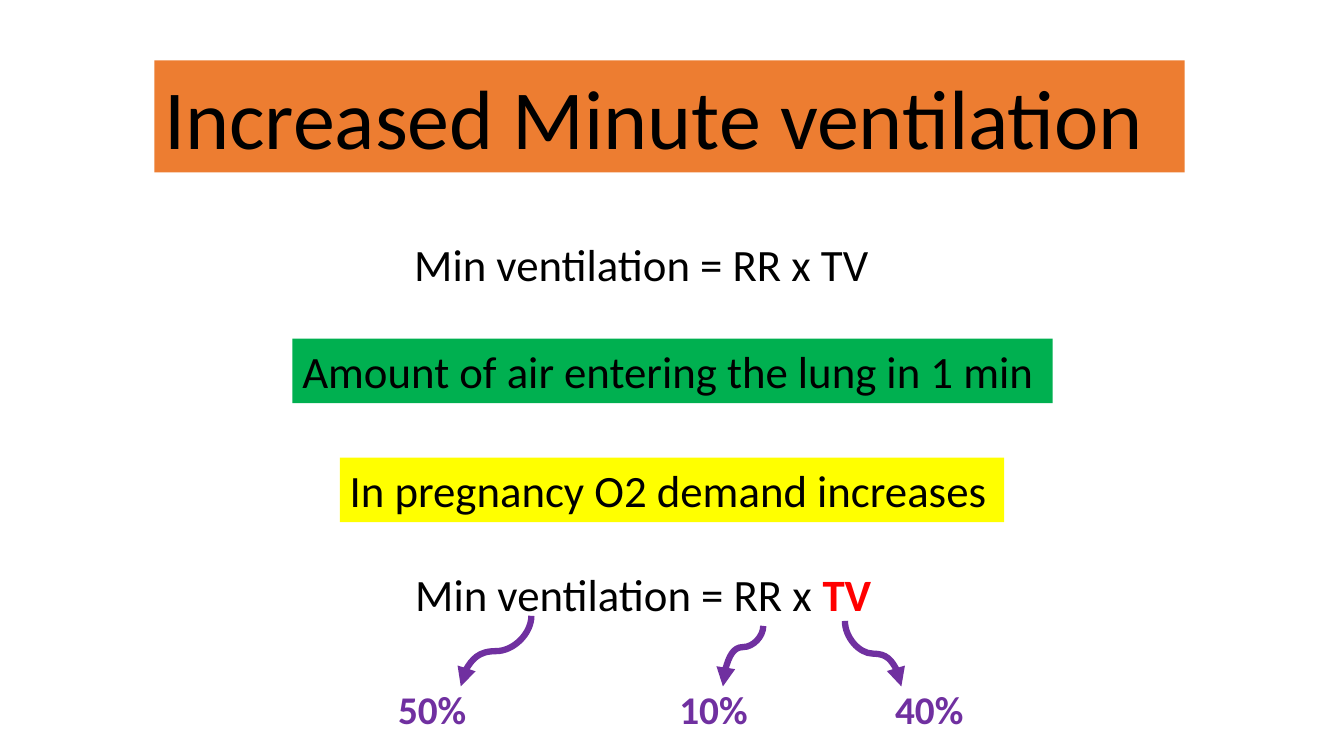
from dataclasses import dataclass

from lxml.etree import SubElement
from pptx import Presentation
from pptx.dml.color import RGBColor
from pptx.enum.shapes import MSO_CONNECTOR, MSO_SHAPE
from pptx.enum.text import MSO_ANCHOR, PP_ALIGN
from pptx.oxml.ns import qn
from pptx.slide import Slide
from pptx.util import Inches, Pt

COLORS = {
    "black": "000000",
    "orange": "ED7D31",
    "green": "00B050",
    "yellow": "FFFF00",
    "red": "FF0000",
    "purple": "7030A0",
}
FONT = "Calibri"


@dataclass(frozen=True)
class Run:
    text: str
    color: str = "black"
    bold: bool = False


@dataclass(frozen=True)
class Label:
    left: float
    top: float
    width: float
    height: float
    runs: tuple[Run, ...]
    size: int = 32
    fill: str | None = None


@dataclass(frozen=True)
class CurvedArrow:
    start: tuple[float, float]
    end: tuple[float, float]
    bend: float = 0.5


def percentage(left: float, text: str) -> Label:
    return Label(left, 6.75, 1.07, 0.57, (Run(text, "purple", True),), 28)


LABELS = (
    Label(1.53, 0.6, 10.22, 1.11, (Run("Increased Minute ventilation"),), 60, "orange"),
    Label(4.01, 2.3, 4.78, 0.64, (Run("Min ventilation = RR x TV"),)),
    Label(2.9, 3.36, 7.54, 0.64,
          (Run("Amount of air entering the lung in 1 min"),), fill="green"),
    Label(3.37, 4.54, 6.59, 0.64,
          (Run("In pregnancy O2 demand increases"),), fill="yellow"),
    Label(4.02, 5.57, 4.76, 0.64,
          (Run("Min ventilation = RR x "), Run("TV", "red", True))),
    percentage(3.85, "50%"),
    percentage(6.64, "10%"),
    percentage(8.78, "40%"),
)

ARROWS = (
    CurvedArrow((5.27, 6.11), (4.57, 6.81)),
    CurvedArrow((7.57, 6.21), (7.17, 6.81), 0.35),
    CurvedArrow((8.38, 6.16), (8.94, 6.81)),
)


def rgb(name: str) -> RGBColor:
    return RGBColor.from_string(COLORS[name])


def add_label(slide: Slide, label: Label) -> None:
    box = tuple(Inches(n) for n in (label.left, label.top, label.width, label.height))
    if label.fill:
        shape = slide.shapes.add_shape(MSO_SHAPE.RECTANGLE, *box)
        shape.shadow.inherit = False
        shape.fill.solid()
        shape.fill.fore_color.rgb = rgb(label.fill)
        shape.line.fill.background()
    else:
        shape = slide.shapes.add_textbox(*box)
    frame = shape.text_frame
    frame.word_wrap = True
    frame.vertical_anchor = MSO_ANCHOR.TOP
    paragraph = frame.paragraphs[0]
    paragraph.alignment = PP_ALIGN.LEFT
    for part in label.runs:
        run = paragraph.add_run()
        run.text = part.text
        run.font.name = FONT
        run.font.size = Pt(label.size)
        run.font.bold = part.bold
        run.font.color.rgb = rgb(part.color)


def add_curved_arrow(slide: Slide, arrow: CurvedArrow) -> None:
    """Draw a curve that leaves and arrives vertically, by a quarter turn about its centre."""
    (start_x, start_y), (end_x, end_y) = arrow.start, arrow.end
    center_x, center_y = (start_x + end_x) / 2, (start_y + end_y) / 2
    goes_right = end_x > start_x
    reach = (end_y - start_y) / 2 * (-1 if goes_right else 1)
    spread = abs(end_x - start_x) / 2
    connector = slide.shapes.add_connector(
        MSO_CONNECTOR.CURVE,
        Inches(center_x - reach), Inches(center_y - spread),
        Inches(center_x + reach), Inches(center_y + spread),
    )
    connector.line.color.rgb = rgb("purple")
    connector.line.width = Pt(4.5)

    properties = connector._element.spPr
    quarter_turns = 3 if goes_right else 1
    properties.find(qn("a:xfrm")).set("rot", str(quarter_turns * 90 * 60000))
    adjustments = properties.find(qn("a:prstGeom")).get_or_add_avLst()
    SubElement(adjustments, qn("a:gd"), name="adj1", fmla=f"val {round(arrow.bend * 100000)}")
    SubElement(properties.find(qn("a:ln")), qn("a:tailEnd"), type="triangle")
    SubElement(properties, qn("a:effectLst"))


def main() -> None:
    presentation = Presentation()
    presentation.slide_width = Inches(13.33)
    presentation.slide_height = Inches(7.5)
    slide = presentation.slides.add_slide(presentation.slide_layouts[6])
    for label in LABELS:
        add_label(slide, label)
    for arrow in ARROWS:
        add_curved_arrow(slide, arrow)
    presentation.save("out.pptx")


if __name__ == "__main__":
    main()
